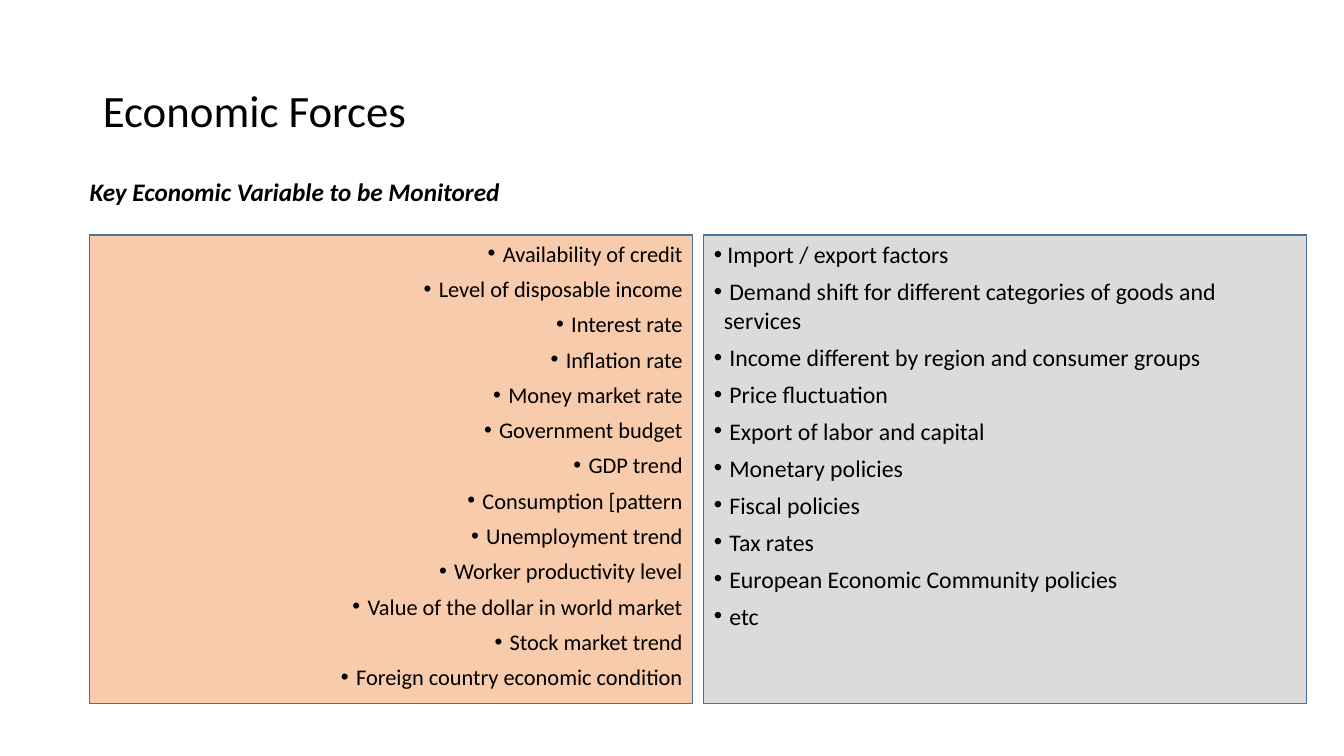
from dataclasses import dataclass

from lxml.etree import SubElement
from pptx import Presentation
from pptx.dml.color import RGBColor as Rgb
from pptx.enum.text import MSO_ANCHOR as Anchor, MSO_AUTO_SIZE as AutoSize, PP_ALIGN as Align
from pptx.oxml.ns import qn
from pptx.util import Inches, Pt


@dataclass(frozen=True)
class Theme:
    font: str = "Calibri"
    text: Rgb = Rgb(0x00, 0x00, 0x00)
    border: Rgb = Rgb(0x43, 0x73, 0x9E)
    peach: Rgb = Rgb(0xF8, 0xCB, 0xAD)
    gray: Rgb = Rgb(0xDB, 0xDB, 0xDB)
    title_size: int = 32
    subtitle_size: int = 18
    left_size: int = 16
    right_size: int = 17


THEME = Theme()

PANEL_TOP, PANEL_WIDTH, PANEL_HEIGHT = 2.33, 5.98, 4.65
PANEL_LEFT, PANEL_STEP = 0.89, 6.09
HANGING = 0.1

MARKET_VARIABLES = [
    "Availability of credit",
    "Level of disposable income",
    "Interest rate",
    "Inflation rate",
    "Money market rate",
    "Government budget",
    "GDP trend",
    "Consumption [pattern",
    "Unemployment trend",
    "Worker productivity level",
    "Value of the dollar in world market",
    "Stock market trend",
    "Foreign country economic condition",
]
POLICY_VARIABLES = [
    "Import / export factors",
    "Demand shift for different categories of goods and services",
    "Income different by region and consumer groups",
    "Price fluctuation",
    "Export of labor and capital",
    "Monetary policies",
    "Fiscal policies",
    "Tax rates",
    "European Economic Community policies",
    "etc",
]


def place(box, left, top, width, height):
    box.left, box.top = Inches(left), Inches(top)
    box.width, box.height = Inches(width), Inches(height)


def style_font(para, size, emphasis=False):
    font = para.font
    font.name, font.size = THEME.font, Pt(size)
    font.color.rgb = THEME.text
    font.bold = font.italic = emphasis


def set_bullet(para, indent):
    properties = para._p.get_or_add_pPr()
    properties.set("marL", str(Inches(indent)))
    properties.set("indent", str(-Inches(indent)))
    SubElement(properties, qn("a:buChar")).set("char", "•")


def fill_title(box, text):
    place(box, 0.92, 0.4, 11.5, 1.45)
    frame = box.text_frame
    frame.text = text
    frame.auto_size = AutoSize.NONE
    frame.vertical_anchor = Anchor.MIDDLE
    para = frame.paragraphs[0]
    para.alignment = Align.LEFT
    para.line_spacing = 0.9
    style_font(para, THEME.title_size)


def add_subtitle(page, text):
    box = page.shapes.add_textbox(Inches(0.79), Inches(1.7), Inches(4.32), Inches(0.4))
    frame = box.text_frame
    frame.word_wrap = False
    frame.auto_size = AutoSize.SHAPE_TO_FIT_TEXT
    frame.text = text
    style_font(frame.paragraphs[0], THEME.subtitle_size, emphasis=True)


def fill_panel(box, column, items, color, size, align, first_indent=HANGING):
    place(box, PANEL_LEFT + column * PANEL_STEP, PANEL_TOP, PANEL_WIDTH, PANEL_HEIGHT)
    box.fill.solid()
    box.fill.fore_color.rgb = color
    box.line.color.rgb = THEME.border
    box.line.width = Pt(1)
    frame = box.text_frame
    frame.auto_size = AutoSize.NONE
    frame.text = "\n".join(f" {item}" for item in items)
    for number, para in enumerate(frame.paragraphs):
        para.alignment = align
        para.space_before = Pt(6)
        set_bullet(para, HANGING if number else first_indent)
        style_font(para, size)


def main():
    deck = Presentation()
    deck.slide_width, deck.slide_height = Inches(13.33), Inches(7.5)

    # Two Content layout: title and two lists
    page = deck.slides.add_slide(deck.slide_layouts[3])
    title, left_list, right_list = page.placeholders

    # Headings
    fill_title(title, "Economic Forces")
    add_subtitle(page, "Key Economic Variable to be Monitored")

    # Side-by-side lists
    fill_panel(left_list, 0, MARKET_VARIABLES, THEME.peach, THEME.left_size, Align.RIGHT)
    fill_panel(right_list, 1, POLICY_VARIABLES, THEME.gray, THEME.right_size, Align.LEFT,
               first_indent=0)

    deck.save("out.pptx")


if __name__ == "__main__":
    main()
